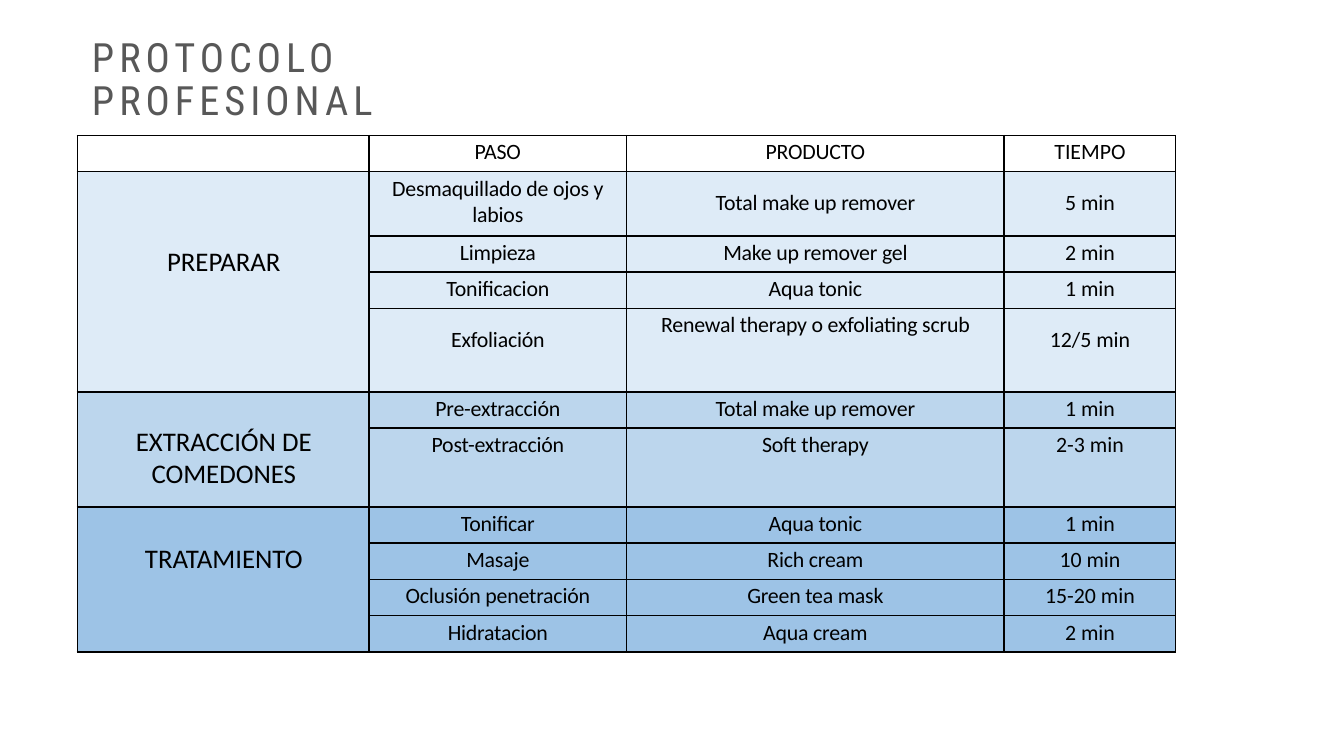
from dataclasses import dataclass
from itertools import product
from typing import Any

from lxml import etree
from pptx import Presentation
from pptx import util as u
from pptx.dml.color import RGBColor
from pptx.enum import text
from pptx.oxml import ns

BLACK, GREY, WHITE = "000000", "585858", "FFFFFF"
LOW, HIGH = 0.03, 0.15  # top margins of table cells
COLUMNS = [2.41, 2.13, 3.12, 1.42]
SPACING = [0, -0.1, -0.1, 0]  # letter spacing of each column, in points
HEADERS = ["", "PASO", "PRODUCTO", "TIEMPO"]


@dataclass
class Step:
    name: str
    item: str
    time: str
    height: float = 0.3
    margins: tuple[float, float, float] = (LOW, LOW, LOW)


@dataclass
class Phase:
    label: str
    label_top: float
    label_height: float
    fill: str
    steps: list[Step]


PHASES = [
    Phase("PREPARAR", 1.97, 0.37, "DEEBF7", [
        Step("Desmaquillado de ojos y\nlabios", "Total make up remover", "5 min",
             0.53, (LOW, HIGH, HIGH)),
        Step("Limpieza", "Make up remover gel", "2 min"),
        Step("Tonificacion", "Aqua tonic", "1 min"),
        Step("Exfoliación", "Renewal therapy o exfoliating scrub", "12/5 min",
             0.69, (HIGH, LOW, HIGH)),
    ]),
    Phase("EXTRACCIÓN DE COMEDONES", 3.46, 0.64, "BCD6ED", [
        Step("Pre-extracción", "Total make up remover", "1 min"),
        Step("Post-extracción", "Soft therapy", "2-3 min", 0.65),
    ]),
    Phase("TRATAMIENTO", 4.43, 0.37, "9DC3E6", [
        Step("Tonificar", "Aqua tonic", "1 min"),
        Step("Masaje", "Rich cream", "10 min"),
        Step("Oclusión penetración", "Green tea mask", "15-20 min"),
        Step("Hidratacion", "Aqua cream", "2 min"),
    ]),
]


def colour(value: str) -> RGBColor:
    return RGBColor.from_string(value)


def apply(target: Any, values: dict[str, Any]) -> None:
    for name, value in values.items():
        setattr(target, name, value)


def paint(shape: Any, value: str) -> None:
    shape.fill.solid()
    shape.fill.fore_color.rgb = colour(value)


def write(frame: Any, words: str, size: float, face: str, ink: str, align: Any,
          spacing: float = 0) -> None:
    frame.text = words
    for para in frame.paragraphs:
        para.alignment = align
        for span in para.runs:
            apply(span.font, {"size": u.Pt(size), "name": face})
            span.font.color.rgb = colour(ink)
            span.font._element.set("spc", str(round(spacing * 100)))
        if not para.runs:
            etree.SubElement(para._p, ns.qn("a:endParaRPr"), sz=str(size * 100))


def add_borders(cell: Any) -> None:
    properties = cell._tc.get_or_add_tcPr()
    for side in ("L", "R", "T", "B"):
        line = etree.SubElement(properties, ns.qn(f"a:ln{side}"), w=str(u.Pt(1)))
        solid = etree.SubElement(line, ns.qn("a:solidFill"))
        etree.SubElement(solid, ns.qn("a:srgbClr"), val=BLACK)


def fill_cell(cell: Any, words: str, fill: str, spacing: float, top: float = LOW) -> None:
    write(cell.text_frame, words, 13, "Calibri", BLACK, text.PP_ALIGN.CENTER, spacing)
    apply(cell, {"margin_left": 0, "margin_right": 0, "margin_bottom": 0,
                 "margin_top": u.Inches(top), "vertical_anchor": text.MSO_ANCHOR.TOP})
    add_borders(cell)
    paint(cell, fill)


def add_title(page: Any) -> None:
    box = page.shapes.title
    apply(box, {"left": u.Inches(0.76), "top": u.Inches(0.49),
                "width": u.Inches(3.41), "height": u.Inches(0.36)})
    paint(box, WHITE)
    frame = box.text_frame
    write(frame, "PROTOCOLO PROFESIONAL", 24, "Roboto Condensed", GREY,
          text.PP_ALIGN.LEFT, 3)
    apply(frame, {"margin_left": 0, "margin_right": 0, "margin_top": 0, "margin_bottom": 0,
                  "word_wrap": True, "auto_size": text.MSO_AUTO_SIZE.NONE,
                  "vertical_anchor": text.MSO_ANCHOR.MIDDLE})
    frame.paragraphs[0].line_spacing = 0.9


def add_protocol(page: Any) -> None:
    heights = [0.3] + [step.height for phase in PHASES for step in phase.steps]
    table = page.shapes.add_table(
        len(heights), len(COLUMNS), u.Inches(0.64), u.Inches(1.12),
        u.Inches(sum(COLUMNS)), u.Inches(sum(heights))).table
    apply(table, {"first_row": False, "horz_banding": False})
    for column, width in zip(table.columns, COLUMNS):
        column.width = u.Inches(width)
    for row, height in zip(table.rows, heights):
        row.height = u.Inches(height)

    # Header row
    for index, header in enumerate(HEADERS):
        fill_cell(table.cell(0, index), header, WHITE, SPACING[index])

    # Steps of each phase, with one merged cell at the left
    first = 1
    for phase in PHASES:
        for (offset, step), index in product(enumerate(phase.steps), range(len(COLUMNS))):
            words = ("", step.name, step.item, step.time)[index]
            top = (LOW, *step.margins)[index]
            fill_cell(table.cell(first + offset, index), words, phase.fill,
                      SPACING[index], top)
        last = first + len(phase.steps) - 1
        table.cell(first, 0).merge(table.cell(last, 0))
        first = last + 1


def add_label(page: Any, phase: Phase) -> None:
    box = page.shapes.add_textbox(u.Inches(0.89), u.Inches(phase.label_top),
                                  u.Inches(1.92), u.Inches(phase.label_height))
    box.text_frame.word_wrap = True
    write(box.text_frame, phase.label, 16, "Calibri", BLACK, text.PP_ALIGN.CENTER)


def main() -> None:
    deck = Presentation()
    apply(deck, {"slide_width": u.Inches(11.11), "slide_height": u.Inches(6.25)})
    page = deck.slides.add_slide(deck.slide_layouts[5])
    # Table first, then the title and the phase labels over it
    add_protocol(page)
    add_title(page)
    for phase in PHASES:
        add_label(page, phase)
    deck.save("out.pptx")


if __name__ == "__main__":
    main()
